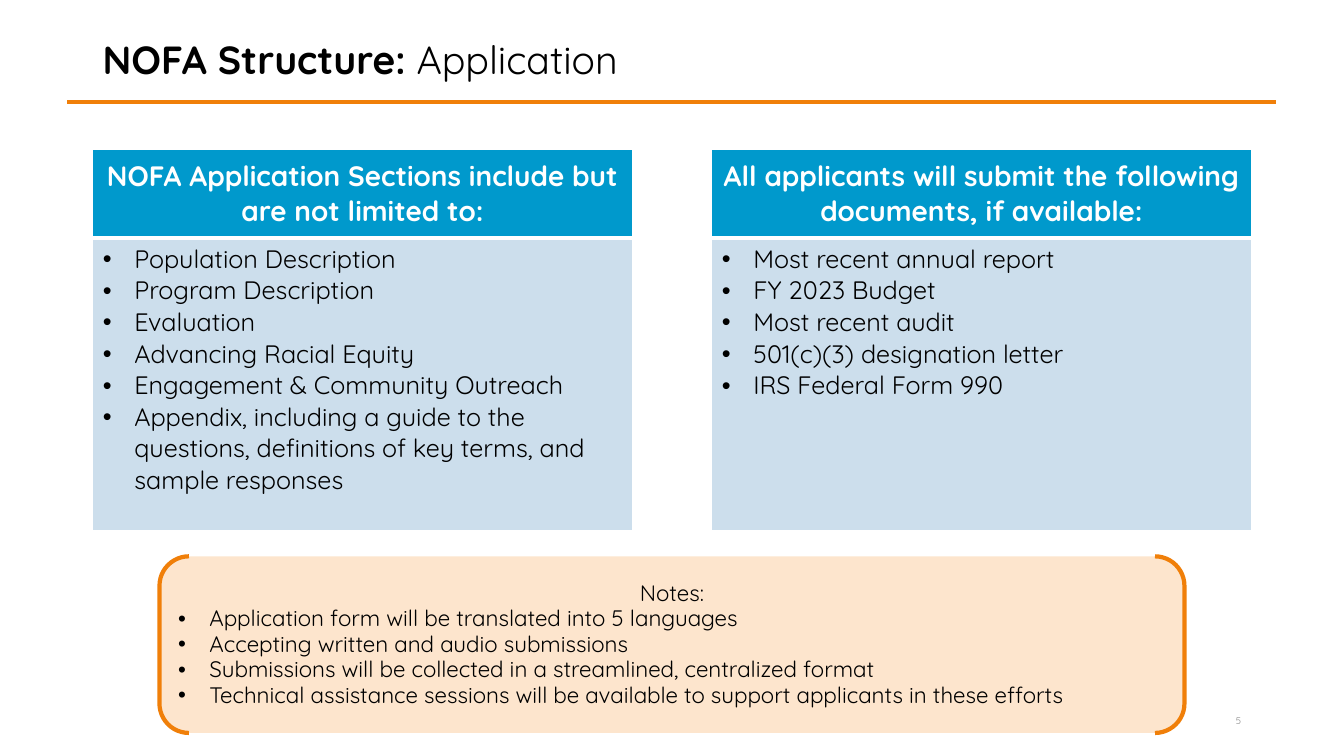
from lxml.etree import SubElement
from pptx import Presentation
from pptx.dml.color import RGBColor
from pptx.enum.shapes import MSO_CONNECTOR, MSO_SHAPE
from pptx.enum.text import MSO_ANCHOR, PP_ALIGN
from pptx.oxml.ns import qn
from pptx.util import Cm, Pt

FONT = "Quicksand"
BLACK, WHITE, ORANGE = "000000", "FFFFFF", "F07F09"
BLUE, PALE_BLUE, PALE_ORANGE, GREY = "0099CC", "CCDEEC", "FDE5CD", "8C8C8C"

TITLE = ("NOFA Structure:", " Application")
PANELS = [
    ("NOFA Application Sections include but are not limited to:",
     ["Population Description",
      "Program Description",
      "Evaluation",
      "Advancing Racial Equity",
      "Engagement & Community Outreach",
      "Appendix, including a guide to the questions, definitions of key terms, "
      "and sample responses"]),
    ("All applicants will submit the following documents, if available:",
     ["Most recent annual report",
      "FY 2023 Budget",
      "Most recent audit",
      "501(c)(3) designation letter",
      "IRS Federal Form 990"]),
]
NOTES_HEADING = "Notes:"
NOTES = [
    "Application form will be translated into 5 languages",
    "Accepting written and audio submissions",
    "Submissions will be collected in a streamlined, centralized format",
    "Technical assistance sessions will be available to support applicants in these efforts",
]
PAGE_NUMBER = "5"

SLIDE_W, SLIDE_H = Cm(33.87), Cm(19.05)
MARGIN = Cm(2.34)
PANEL_TOP, PANEL_W = Cm(3.76), Cm(13.59)
ROW_HEIGHTS = (Cm(2.24), Cm(7.37))
INDENT = Cm(0.79)


def rgb(value):
    return RGBColor.from_string(value)


def format_runs(p, size, color=BLACK, bold=False):
    for r in p.runs:
        r.font.name = FONT
        r.font.size = Pt(size)
        r.font.bold = bold
        r.font.color.rgb = rgb(color)


def add_bullet(p):
    """Give the paragraph a hanging round bullet."""
    p.alignment = PP_ALIGN.LEFT
    pPr = p._p.get_or_add_pPr()
    pPr.set("marL", str(INDENT))
    pPr.set("indent", str(-INDENT))
    SubElement(pPr, qn("a:buFont")).set("typeface", "Arial")
    SubElement(pPr, qn("a:buChar")).set("char", "•")


def set_borders(cell, widths):
    """Draw white cell borders; widths are points for left, right, top, bottom."""
    tcPr = cell._tc.get_or_add_tcPr()
    for i, (side, width) in enumerate(zip("LRTB", widths)):
        ln = tcPr.makeelement(qn(f"a:ln{side}"), {"w": str(Pt(width))})
        fill = SubElement(ln, qn("a:solidFill"))
        SubElement(fill, qn("a:srgbClr")).set("val", WHITE)
        tcPr.insert(i, ln)


def fill_cell(cell, color, border_widths):
    cell.fill.solid()
    cell.fill.fore_color.rgb = rgb(color)
    set_borders(cell, border_widths)


def add_text_box(s, left, top, width, height):
    tf = s.shapes.add_textbox(left, top, width, height).text_frame
    tf.word_wrap = True
    return tf


def add_title(s):
    tf = add_text_box(s, MARGIN, Cm(0.89), SLIDE_W - 2 * MARGIN, Cm(2.34))
    p = tf.paragraphs[0]
    p.line_spacing = 0.9
    for text in TITLE:
        p.add_run().text = text
    format_runs(p, 28)
    p.runs[0].font.bold = True

    rule = s.shapes.add_connector(MSO_CONNECTOR.STRAIGHT, Cm(1.7), Cm(2.57), Cm(32.16), Cm(2.57))
    rule.line.color.rgb = rgb(ORANGE)
    rule.line.width = Pt(2.25)
    SubElement(rule._element.spPr, qn("a:effectLst"))


def add_panel(s, left, heading, items):
    table = s.shapes.add_table(2, 1, left, PANEL_TOP, PANEL_W, sum(ROW_HEIGHTS)).table
    table.horz_banding = False
    for row, height in zip(table.rows, ROW_HEIGHTS):
        row.height = height
    head, body = table.cell(0, 0), table.cell(1, 0)

    fill_cell(head, BLUE, (1, 1, 1, 3))
    head.vertical_anchor = MSO_ANCHOR.MIDDLE
    p = head.text_frame.paragraphs[0]
    p.text = heading
    p.alignment = PP_ALIGN.CENTER
    format_runs(p, 20, WHITE, True)

    fill_cell(body, PALE_BLUE, (1, 1, 3, 1))
    body.text_frame.text = "\n".join(items)
    for p in body.text_frame.paragraphs:
        add_bullet(p)
        format_runs(p, 18)


def add_notes_box(s):
    width = Cm(25.83)
    sp = s.shapes.add_shape(MSO_SHAPE.DOUBLE_BRACKET, (SLIDE_W - width) // 2, Cm(14.02),
                            width, Cm(4.45))
    sp.shadow.inherit = False
    sp.fill.solid()
    sp.fill.fore_color.rgb = rgb(PALE_ORANGE)
    sp.line.color.rgb = rgb(ORANGE)
    sp.line.width = Pt(3)
    tf = sp.text_frame
    tf.word_wrap = True
    tf.vertical_anchor = MSO_ANCHOR.MIDDLE
    tf.text = "\n".join([NOTES_HEADING] + NOTES)
    for i, p in enumerate(tf.paragraphs):
        if i == 0:
            p.alignment = PP_ALIGN.CENTER
        else:
            add_bullet(p)
        p.line_spacing = 0.95
        format_runs(p, 16)


def add_page_number(s):
    width = Cm(7.62)
    tf = add_text_box(s, SLIDE_W - MARGIN - width, Cm(17.65), width, Cm(1.02))
    tf.vertical_anchor = MSO_ANCHOR.MIDDLE
    p = tf.paragraphs[0]
    p.text = PAGE_NUMBER
    p.alignment = PP_ALIGN.RIGHT
    format_runs(p, 7, GREY)


def main():
    prs = Presentation()
    prs.slide_width, prs.slide_height = SLIDE_W, SLIDE_H
    s = prs.slides.add_slide(prs.slide_layouts[6])
    add_title(s)
    for left, (heading, items) in zip((MARGIN, SLIDE_W - MARGIN - PANEL_W), PANELS):
        add_panel(s, left, heading, items)
    add_notes_box(s)
    add_page_number(s)
    prs.save("out.pptx")


if __name__ == "__main__":
    main()
